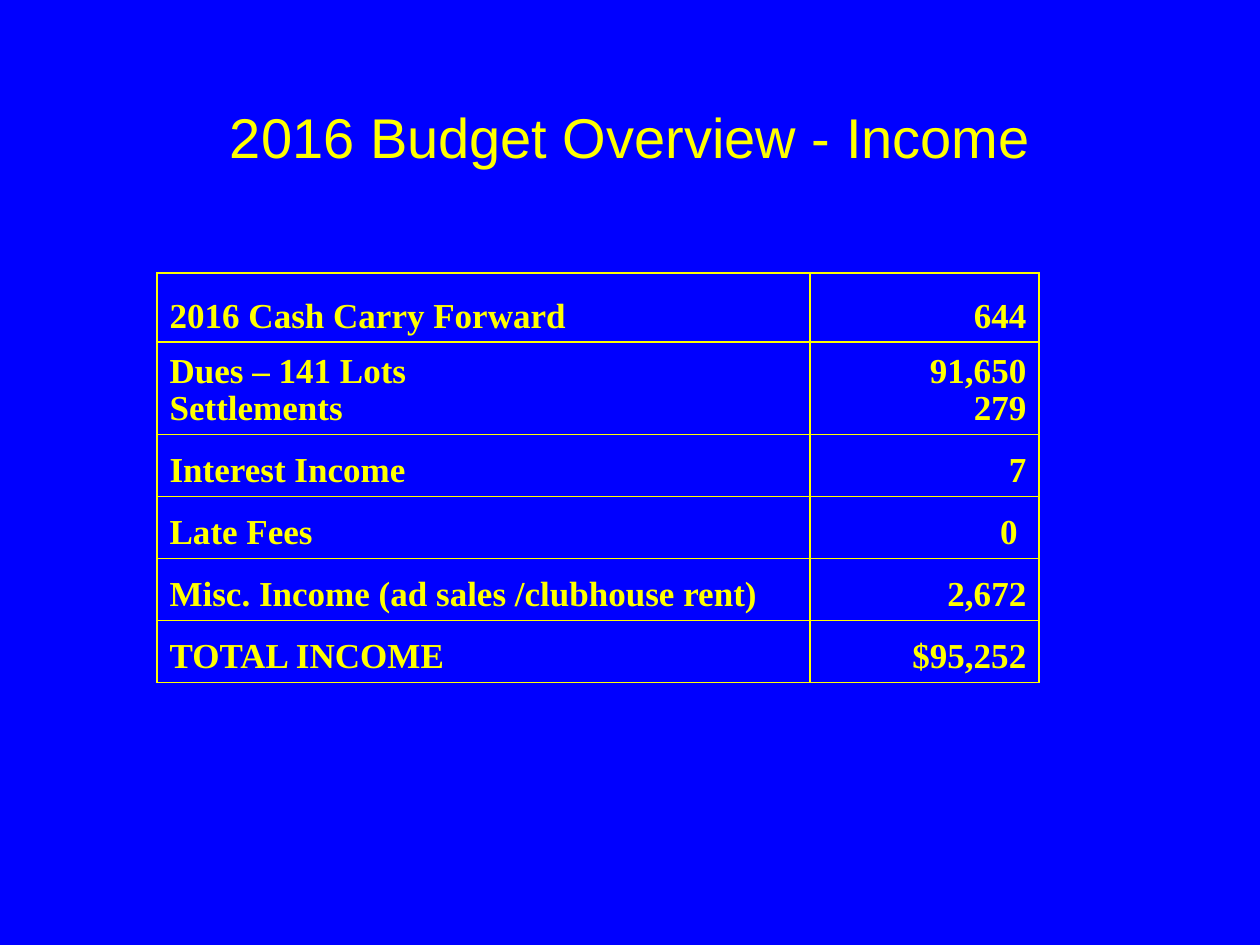
from dataclasses import dataclass

from lxml import etree
from pptx import Presentation
from pptx import util as u
from pptx.dml import color
from pptx.enum import text
from pptx.oxml import ns

PX = 914400 / 126
COLORS = {"background": "0000FF", "yellow": "FFFF00"}
TITLE_FONT = {"name": "Arial", "size": u.Pt(32), "bold": False}
TABLE_FONT = {"name": "Times New Roman", "size": u.Pt(20), "bold": True}
COLUMN_WIDTHS = (653, 229)
COLUMN_ALIGNMENTS = (text.PP_ALIGN.LEFT, text.PP_ALIGN.RIGHT)


@dataclass(frozen=True)
class IncomeRow:
    labels: tuple[str, ...]
    amounts: tuple[str, ...]
    height: int = 62


INCOME_ROWS = (
    IncomeRow(("2016 Cash Carry Forward",), ("644",), 69),
    IncomeRow(("Dues – 141 Lots", "Settlements"), ("91,650", "279"), 90),
    IncomeRow(("Interest Income",), ("7",)),
    IncomeRow(("Late Fees",), ("0 ",)),
    IncomeRow(("Misc. Income (ad sales /clubhouse rent)",), ("2,672",)),
    IncomeRow(("TOTAL INCOME",), ("$95,252",)),
)


def px(length: int) -> u.Emu:
    return u.Emu(round(length * PX))


def rgb(name: str) -> color.RGBColor:
    return color.RGBColor.from_string(COLORS[name])


def set_values(target, values: dict) -> None:
    for name, value in values.items():
        setattr(target, name, value)


def write_line(paragraph, line: str, font: dict, alignment) -> None:
    paragraph.alignment = alignment
    run = paragraph.add_run()
    run.text = line
    set_values(run.font, font)
    run.font.color.rgb = rgb("yellow")


def add_title(slide, title: str) -> None:
    shape = slide.shapes.add_textbox(px(95), px(84), px(1071), px(105))
    frame = shape.text_frame
    set_values(frame, {"word_wrap": True, "vertical_anchor": text.MSO_ANCHOR.MIDDLE})
    write_line(frame.paragraphs[0], title, TITLE_FONT, text.PP_ALIGN.CENTER)


def add_borders(cell) -> None:
    properties = cell._tc.get_or_add_tcPr()
    for side in ("lnL", "lnR", "lnT", "lnB"):
        line = etree.SubElement(properties, ns.qn(f"a:{side}"), w=str(u.Pt(1)))
        fill = etree.SubElement(line, ns.qn("a:solidFill"))
        etree.SubElement(fill, ns.qn("a:srgbClr"), val=COLORS["yellow"])


def fill_cell(cell, lines: tuple[str, ...], alignment) -> None:
    cell.vertical_anchor = text.MSO_ANCHOR.BOTTOM
    add_borders(cell)
    cell.fill.background()
    frame = cell.text_frame
    for index, line in enumerate(lines):
        paragraph = frame.add_paragraph() if index else frame.paragraphs[0]
        paragraph.line_spacing = 0.95
        indents = paragraph._p.get_or_add_pPr()
        indents.set("marL", str(px(48)))
        indents.set("indent", str(-px(48)))
        write_line(paragraph, line, TABLE_FONT, alignment)


def add_income_table(slide, rows: tuple[IncomeRow, ...]) -> None:
    height = sum(row.height for row in rows)
    frame = slide.shapes.add_table(
        len(rows), len(COLUMN_WIDTHS), px(157), px(273), px(sum(COLUMN_WIDTHS)), px(height)
    )
    table = frame.table
    set_values(table, {"first_row": False, "horz_banding": False})
    for column, width in zip(table.columns, COLUMN_WIDTHS):
        column.width = px(width)
    for table_row, row in zip(table.rows, rows):
        table_row.height = px(row.height)
        contents = (row.labels, row.amounts)
        for cell, lines, alignment in zip(table_row.cells, contents, COLUMN_ALIGNMENTS):
            fill_cell(cell, lines, alignment)


def main() -> None:
    presentation = Presentation()
    set_values(presentation, {"slide_width": px(1260), "slide_height": px(945)})
    slide = presentation.slides.add_slide(presentation.slide_layouts[6])
    slide.background.fill.solid()
    slide.background.fill.fore_color.rgb = rgb("background")
    add_title(slide, "2016 Budget Overview - Income")
    add_income_table(slide, INCOME_ROWS)
    presentation.save("out.pptx")


if __name__ == "__main__":
    main()
